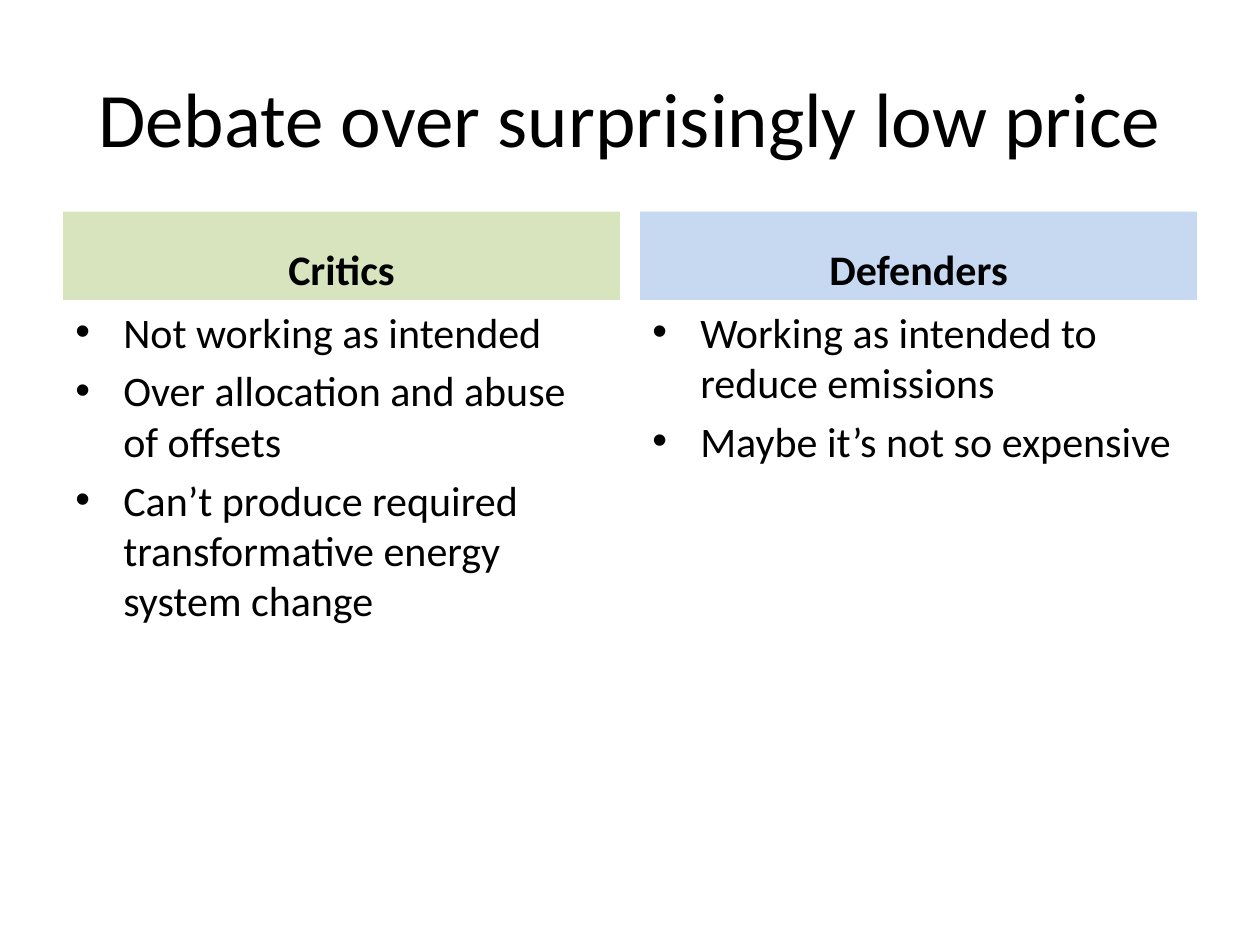
from lxml.etree import SubElement
from pptx import Presentation
from pptx.dml.color import RGBColor
from pptx.enum.shapes import MSO_SHAPE
from pptx.enum.text import MSO_ANCHOR, PP_ALIGN
from pptx.oxml.ns import qn
from pptx.util import Inches, Pt

COLORS = {"text": "000000", "critics": "D7E4BD", "defenders": "C6D9F1"}
LEFT, COLUMN_WIDTH, COLUMN_STEP = 0.5, 4.42, 4.58
HEADER_TOP, HEADER_HEIGHT, BODY_HEIGHT = 1.68, 0.7, 4.32
INDENT = 0.38
COLUMNS = [
    ("Critics", "critics", [
        "Not working as intended",
        "Over allocation and abuse of offsets",
        "Can’t produce required transformative energy system change",
    ]),
    ("Defenders", "defenders", [
        "Working as intended to reduce emissions",
        "Maybe it’s not so expensive",
    ]),
]


def set_attrs(obj, values):
    """Set each named attribute on an object."""
    for name, value in values.items():
        setattr(obj, name, value)


def place(sp, left, top, width, height):
    """Move and size a shape, in inches."""
    box = {"left": left, "top": top, "width": width, "height": height}
    set_attrs(sp, {name: Inches(value) for name, value in box.items()})


def write(p, text, size, bold=False, **layout):
    """Write one formatted run into a paragraph."""
    set_attrs(p, layout)
    r = p.add_run()
    r.text = text
    set_attrs(r.font, {"name": "Calibri", "size": Pt(size), "bold": bold})
    r.font.color.rgb = RGBColor.from_string(COLORS["text"])


def add_bullet(p):
    """Give a paragraph a hanging round bullet."""
    pPr = p._p.get_or_add_pPr()
    pPr.set("marL", str(Inches(INDENT)))
    pPr.set("indent", str(-Inches(INDENT)))
    SubElement(pPr, qn("a:buFont")).set("typeface", "Arial")
    SubElement(pPr, qn("a:buChar")).set("char", "•")


def add_title(s, text):
    """Fill the title placeholder."""
    sp = s.shapes.title
    place(sp, LEFT, 0.3, 9, 1.25)
    set_attrs(sp.text_frame, {"word_wrap": True, "vertical_anchor": MSO_ANCHOR.MIDDLE})
    write(sp.text_frame.paragraphs[0], text, 44, alignment=PP_ALIGN.CENTER)


def add_header(s, left, text, color):
    """Add a coloured column header."""
    sp = s.shapes.add_shape(MSO_SHAPE.RECTANGLE, 0, 0, 0, 0)
    place(sp, left, HEADER_TOP, COLUMN_WIDTH, HEADER_HEIGHT)
    sp.shadow.inherit = False
    sp.fill.solid()
    sp.fill.fore_color.rgb = RGBColor.from_string(COLORS[color])
    sp.line.fill.background()
    tf = sp.text_frame
    set_attrs(tf, {"word_wrap": True, "vertical_anchor": MSO_ANCHOR.BOTTOM})
    write(tf.paragraphs[0], text, 24, True, alignment=PP_ALIGN.CENTER, space_before=Pt(4.8))


def add_bullets(s, left, items):
    """Add the bulleted list below a header."""
    sp = s.shapes.add_textbox(0, 0, 0, 0)
    place(sp, left, HEADER_TOP + HEADER_HEIGHT, COLUMN_WIDTH, BODY_HEIGHT)
    tf = sp.text_frame
    tf.word_wrap = True
    for i, item in enumerate(items):
        p = tf.add_paragraph() if i else tf.paragraphs[0]
        write(p, item, 24, space_before=Pt(4.8))
        add_bullet(p)


def main():
    """Build and save the slide."""
    prs = Presentation()
    set_attrs(prs, {"slide_width": Inches(10), "slide_height": Inches(7.5)})
    s = prs.slides.add_slide(prs.slide_layouts[5])
    add_title(s, "Debate over surprisingly low price")
    for i, (header, color, items) in enumerate(COLUMNS):
        left = LEFT + i * COLUMN_STEP
        add_header(s, left, header, color)
        add_bullets(s, left, items)
    prs.save("out.pptx")


if __name__ == "__main__":
    main()
